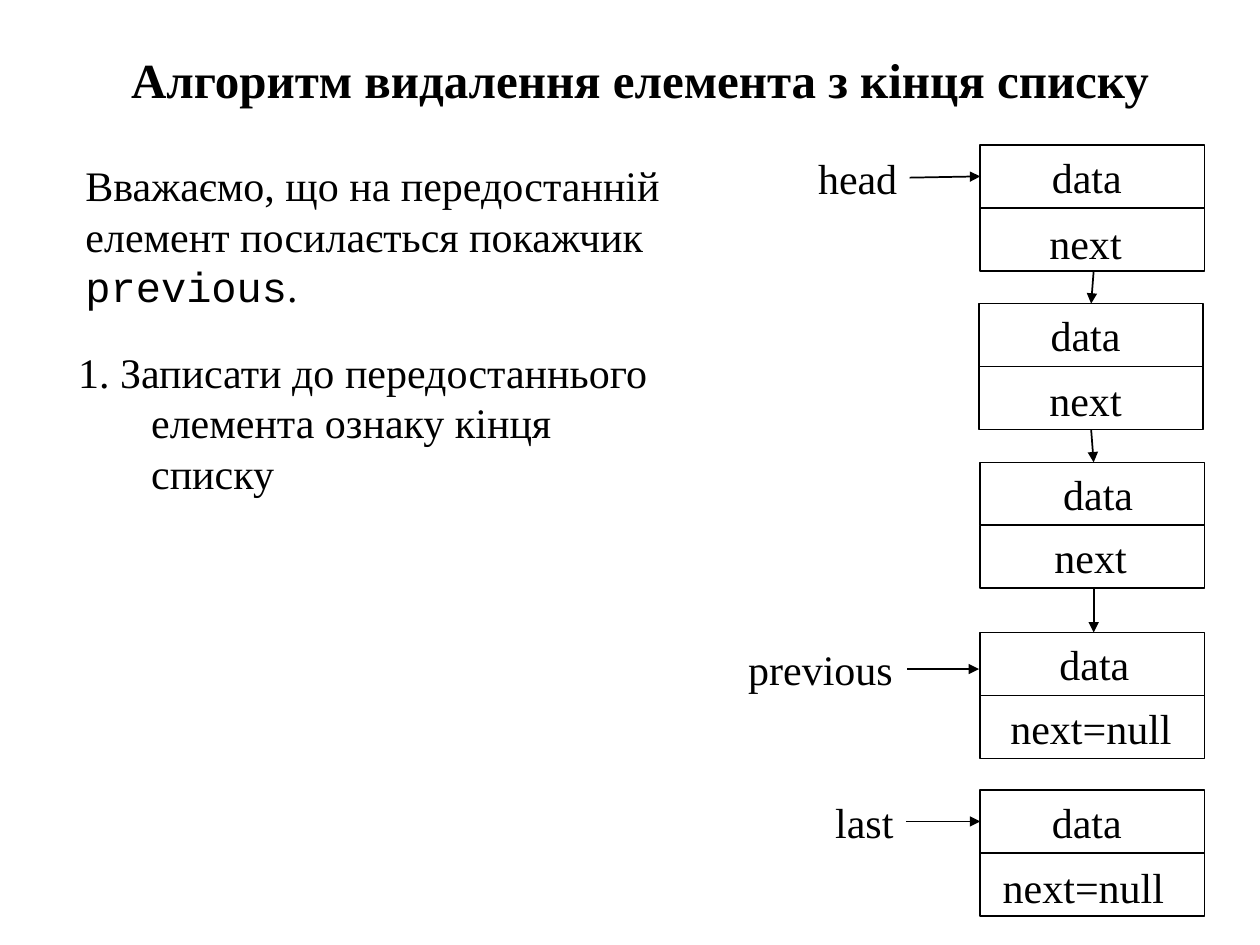
"""Build a slide on removing the last element of a linked list."""
from dataclasses import dataclass

from lxml import etree
from pptx import Presentation
from pptx.dml.color import RGBColor
from pptx.enum.shapes import MSO_CONNECTOR, MSO_SHAPE
from pptx.enum.text import MSO_ANCHOR, MSO_AUTO_SIZE, PP_ALIGN
from pptx.oxml.ns import qn
from pptx.util import Pt

LEFT, CENTER, RIGHT = PP_ALIGN.LEFT, PP_ALIGN.CENTER, PP_ALIGN.RIGHT
MIDDLE = MSO_ANCHOR.MIDDLE
GROW, FIXED = MSO_AUTO_SIZE.SHAPE_TO_FIT_TEXT, MSO_AUTO_SIZE.NONE
RECTANGLE = MSO_SHAPE.RECTANGLE
STRAIGHT = MSO_CONNECTOR.STRAIGHT
SCALE = 9144
TITLE_ONLY = 5


@dataclass(frozen=True)
class Theme:
    """Hold colours, fonts and sizes."""
    ink: RGBColor = RGBColor(0, 0, 0)
    serif: str = "Times New Roman"
    mono: str = "Courier New"
    title: int = 28
    body: int = 24
    line: int = 1


def px(length):
    """Turn px into EMU."""
    return length * SCALE


def assign(target, values):
    """Set attributes from a dict."""
    for name, value in values.items():
        setattr(target, name, value)


class ListSlide:
    """Draw the kinds of element on one slide."""
    CELL_WIDTH, CELL_HEIGHT = 178, 50
    WIDTHS = {"data": 76, "next": 78, "next=null": 149}

    def __init__(self, deck, theme):
        """Add the slide to the deck."""
        self.theme = theme
        self.page = deck.slides.add_slide(deck.slide_layouts[TITLE_ONLY])

    def span(self, para, words, size, font=None, bold=False):
        """Add a formatted span to a paragraph."""
        span = para.add_run()
        span.text = words
        assign(span.font, {"name": font or self.theme.serif, "size": Pt(size), "bold": bold})
        span.font.color.rgb = self.theme.ink

    def title(self, words, left, top, width, height):
        """Place and fill the title."""
        box = self.page.shapes.title
        assign(box, {"left": px(left), "top": px(top), "width": px(width), "height": px(height)})
        box.text_frame.vertical_anchor = MIDDLE
        para = box.text_frame.paragraphs[0]
        para.alignment = CENTER
        self.span(para, words, self.theme.title, bold=True)

    def text(self, spans, left, top, width, height, wrap=False, align=LEFT, parent=None):
        """Add a text box of (words, font) spans and return it."""
        shapes = (parent or self.page).shapes
        box = shapes.add_textbox(px(left), px(top), px(width), px(height))
        assign(box.text_frame, {"word_wrap": wrap, "auto_size": GROW})
        para = box.text_frame.paragraphs[0]
        para.alignment = align
        for words, font in spans:
            self.span(para, words, self.theme.body, font)
        return box

    def step(self, words, left, top, width, height):
        """Add a numbered step with a hanging indent."""
        box = self.text([(words, None)], left, top, width, height, wrap=True)
        assign(box.text_frame, {"margin_left": px(20), "margin_right": px(20),
                                "auto_size": FIXED})
        para = box.text_frame.paragraphs[0]
        para.space_before = Pt(5)
        properties = para._p.get_or_add_pPr()
        properties.set("marL", str(px(108)))
        properties.set("indent", str(px(-58)))

    def node(self, left, top, *fields):
        """Add a list node with one cell per (words, left, drop) field."""
        group = self.page.shapes.add_group_shape()
        for row, (words, text_left, drop) in enumerate(fields):
            cell_top = top + row * self.CELL_HEIGHT
            cell = group.shapes.add_shape(RECTANGLE, px(left), px(cell_top),
                                          px(self.CELL_WIDTH), px(self.CELL_HEIGHT))
            cell.shadow.inherit = False
            cell.fill.background()
            cell.line.width = Pt(self.theme.line)
            cell.line.color.rgb = self.theme.ink
            self.text([(words, None)], text_left, cell_top + drop, self.WIDTHS[words],
                      self.CELL_HEIGHT, parent=group)

    def arrow(self, *ends):
        """Add an arrow from x, y to x, y."""
        link = self.page.shapes.add_connector(STRAIGHT, *map(px, ends))
        link.line.width = Pt(self.theme.line)
        link.line.color.rgb = self.theme.ink
        properties = link._element.spPr
        etree.SubElement(properties.find(qn("a:ln")), qn("a:tailEnd"), type="triangle")
        etree.SubElement(properties, qn("a:effectLst"))


def main():
    """Build and save the deck."""
    deck = Presentation()
    assign(deck, {"slide_width": px(1000), "slide_height": px(750)})
    theme = Theme()
    slide = ListSlide(deck, theme)

    slide.title("Алгоритм видалення елемента з кінця списку", 33, 25, 950, 75)
    slide.text([("Вважаємо, що на передостанній елемент посилається покажчик ", None),
                ("previous", theme.mono), (".", None)], 58, 122, 520, 131, wrap=True)
    slide.step("1. Записати до передостаннього елемента ознаку кінця списку",
               -8, 270, 556, 117)

    nodes = [
        (778, 115, ("data", 825, 0), ("next", 823, 3)),
        (777, 241, ("data", 824, 0), ("next", 823, 1)),
        (778, 367, ("data", 834, 0), ("next", 827, 0)),
        (778, 502, ("data", 831, 0), ("next=null", 792, 1)),
        (778, 627, ("data", 825, 0), ("next=null", 786, 2)),
    ]
    for node in nodes:
        slide.node(*node)

    pointers = [("head", 639, 116, 83, RIGHT), ("previous", 584, 506, 136, LEFT),
                ("last", 652, 627, 67, RIGHT)]
    for name, left, top, width, align in pointers:
        slide.text([(name, None)], left, top, width, 50, align=align)

    arrows = [(722, 141, 778, 140), (720, 531, 777, 531), (719, 652, 778, 652),
              (868, 215, 866, 241), (866, 341, 868, 367), (868, 467, 868, 502)]
    for ends in arrows:
        slide.arrow(*ends)

    deck.save("out.pptx")


if __name__ == "__main__":
    main()
